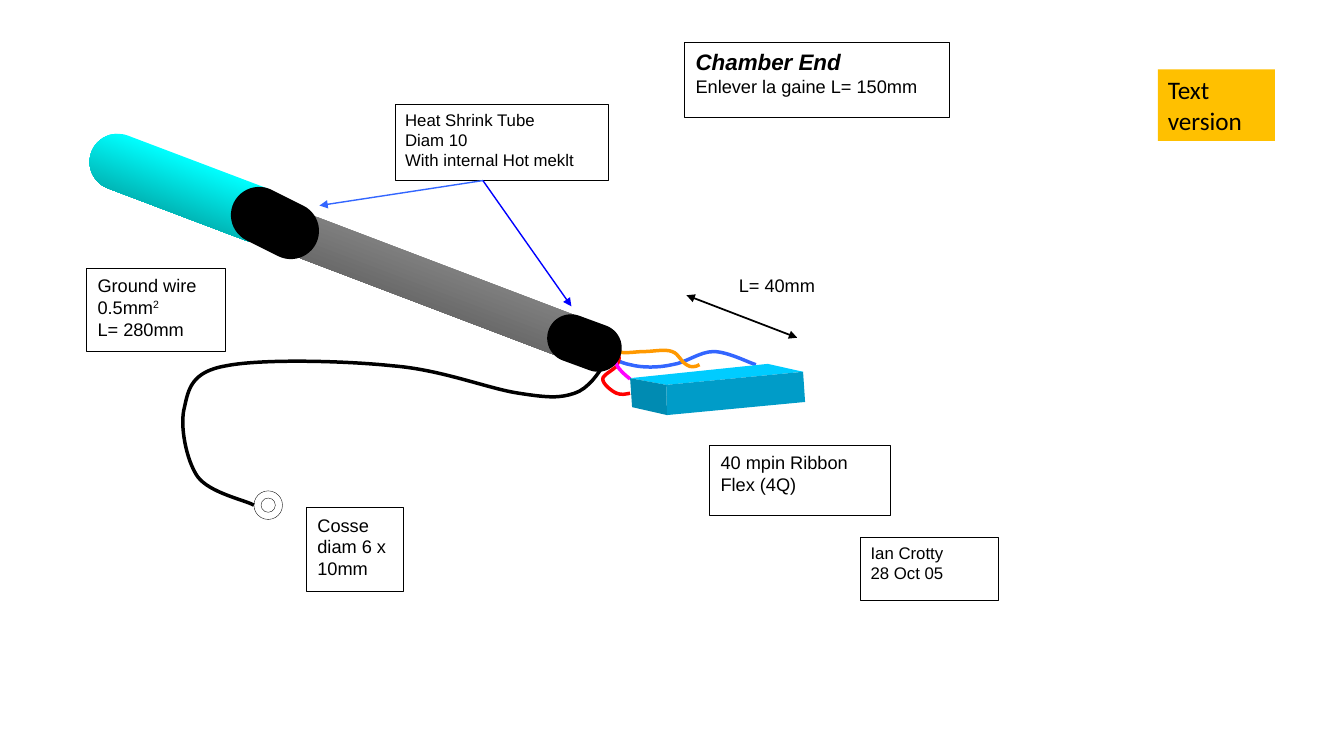
import math

from lxml import etree
from pptx import Presentation
from pptx.dml.color import RGBColor
from pptx.enum.shapes import MSO_CONNECTOR, MSO_SHAPE
from pptx.enum.text import MSO_ANCHOR, MSO_AUTO_SIZE, PP_ALIGN
from pptx.oxml.ns import qn
from pptx.util import Cm, Pt

RECT, ROUND, OVAL = MSO_SHAPE.RECTANGLE, MSO_SHAPE.ROUNDED_RECTANGLE, MSO_SHAPE.OVAL
STRAIGHT = MSO_CONNECTOR.STRAIGHT
TOP, LEFT, NO_FIT = MSO_ANCHOR.TOP, PP_ALIGN.LEFT, MSO_AUTO_SIZE.NONE

COLORS = {
    "black": "000000", "white": "FFFFFF", "amber": "FFC000",
    "cyan": "00FFFF", "cyan shade": "006060",
    "gray": "868686", "gray shade": "383838",
    "blue wire": "3366FF", "red wire": "FF0000",
    "orange wire": "FF9900", "magenta wire": "FF00FF", "arrow": "0000FF",
    "block top": "00CCFF", "block side": "009CC8", "block end": "008BB2",
}
WIDE, NARROW = (0.28, 0.15), (0.25, 0.13)

# Each wire: colour, then a start point followed by cubic curve points
WIRES = [
    ("blue wire", [(15.19, 8.86), (15.39, 8.99), (15.6, 9.14), (15.88, 9.19),
                   (16.18, 9.27), (16.59, 9.27), (16.94, 9.19),
                   (17.3, 9.14), (17.63, 8.86), (17.98, 8.86),
                   (18.34, 8.86), (18.87, 9.14), (19.05, 9.19)]),
    ("red wire", [(14.83, 8.51), (15.11, 8.61), (15.42, 8.74), (15.54, 8.86),
                  (15.65, 8.97), (15.6, 9.09), (15.54, 9.22),
                  (15.47, 9.32), (15.19, 9.45), (15.19, 9.55),
                  (15.19, 9.68), (15.42, 9.86), (15.54, 9.91),
                  (15.65, 9.96), (15.77, 9.93), (15.88, 9.91)]),
    ("orange wire", [(14.83, 8.51), (15.06, 8.66), (15.29, 8.79), (15.54, 8.86),
                     (15.77, 8.92), (16, 8.86), (16.23, 8.86),
                     (16.46, 8.86), (16.76, 8.79), (16.94, 8.86),
                     (17.12, 8.92), (17.17, 9.14), (17.3, 9.19),
                     (17.4, 9.27), (17.53, 9.25), (17.63, 9.19)]),
    ("magenta wire", [(14.83, 8.15), (15.11, 8.28), (15.42, 8.38), (15.54, 8.51),
                      (15.65, 8.61), (15.54, 8.74), (15.54, 8.86),
                      (15.54, 8.97), (15.47, 9.09), (15.54, 9.19),
                      (15.6, 9.32), (15.75, 9.45), (15.88, 9.55)]),
    ("black", [(14.83, 8.86), (15.04, 8.94), (15.24, 9.04), (15.19, 9.22),
               (15.11, 9.37), (14.83, 9.8), (14.48, 9.91),
               (14.12, 10.03), (13.84, 10.03), (13.08, 9.91),
               (12.32, 9.8), (11.15, 9.32), (9.91, 9.22),
               (8.69, 9.09), (6.58, 9.04), (5.69, 9.22),
               (4.83, 9.37), (4.75, 9.8), (4.65, 10.26),
               (4.52, 10.72), (4.7, 11.61), (4.98, 12.01),
               (5.28, 12.42), (6.17, 12.6), (6.4, 12.73)]),
]

# Centres of both ends, radius, lit colour, shaded colour
TUBES = [
    ((2.97, 4.08), (6.43, 5.39), 0.71, "cyan", "cyan shade"),
    ((7.81, 6), (14.49, 8.54), 0.56, "gray", "gray shade"),
    ((6.53, 5.42), (7.33, 5.82), 0.71, "black", "black"),
    ((14.39, 8.52), (15.07, 8.77), 0.6, "black", "black"),
]

BLOCK = [
    ("block top", [(15.88, 9.53), (19.35, 9.17), (20.24, 9.37), (16.79, 9.7)]),
    ("block side", [(16.79, 9.7), (20.24, 9.37), (20.29, 10.13), (16.81, 10.46)]),
    ("block end", [(15.88, 9.53), (16.79, 9.7), (16.81, 10.46), (15.93, 10.26)]),
]

# Position and size, lines, font size, insets
BOXES = [
    ((17.88, 11.23, 4.57, 1.75), ["40 mpin Ribbon Flex (4Q)"], 13, WIDE),
    ((7.72, 12.8, 2.46, 2.11), ["Cosse diam 6 x 10mm"], 13, WIDE),
    ((9.96, 2.64, 5.38, 1.9),
     ["Heat Shrink Tube", "Diam 10", "With internal Hot meklt"], 12, NARROW),
    ((21.69, 13.54, 3.48, 1.6), ["Ian Crotty", "28 Oct 05"], 12, NARROW),
]


def rgb(name):
    return RGBColor.from_string(COLORS[name])


def style(sp, fill=None, line=None, width=0.75):
    sp.shadow.inherit = False
    if fill:
        sp.fill.solid()
        sp.fill.fore_color.rgb = rgb(fill)
    else:
        sp.fill.background()
    if line:
        sp.line.color.rgb = rgb(line)
        sp.line.width = Pt(width)
    else:
        sp.line.fill.background()


def write(sp, lines, size, insets, font="Arial"):
    tf = sp.text_frame
    tf.word_wrap, tf.auto_size, tf.vertical_anchor = True, NO_FIT, TOP
    tf.margin_left = tf.margin_right = Cm(insets[0])
    tf.margin_top = tf.margin_bottom = Cm(insets[1])
    tf.text = "\n".join(lines)
    for p in tf.paragraphs:
        p.alignment = LEFT
        p.font.name, p.font.size = font, Pt(size)
        p.font.color.rgb = rgb("black")
    return tf


def add_box(slide, place, lines, size, insets, fill=None, line="black", font="Arial"):
    sp = slide.shapes.add_shape(RECT, *map(Cm, place))
    style(sp, fill, line)
    return write(sp, lines, size, insets, font)


def add_title(slide):
    sp = slide.shapes.title
    sp.left, sp.top, sp.width, sp.height = map(Cm, (17.25, 1.07, 6.68, 1.9))
    sp.fill.solid()
    sp.fill.fore_color.rgb = rgb("white")
    sp.line.color.rgb = rgb("black")
    sp.line.width = Pt(0.75)
    tf = write(sp, ["Chamber End", "Enlever la gaine L= 150mm"], 13, WIDE)
    font = tf.paragraphs[0].font
    font.size, font.bold, font.italic = Pt(16), True, True


def add_outline(slide, points, closed):
    points = [(Cm(x), Cm(y)) for x, y in points]
    builder = slide.shapes.build_freeform(*points[0])
    builder.add_line_segments(points[1:], close=closed)
    return builder.convert_to_shape()


def add_wire(slide, color, points):
    sp = add_outline(slide, points, False)
    style(sp, None, color, 2.5)
    # Merge every three straight segments into one cubic curve
    segments = list(sp._element.iter(qn("a:lnTo")))
    for i in range(0, len(segments), 3):
        curve = etree.Element(qn("a:cubicBezTo"))
        segments[i].addprevious(curve)
        for segment in segments[i:i + 3]:
            curve.append(segment[0])
            segment.getparent().remove(segment)


def add_tube(slide, start, end, radius, lit, shade):
    (x1, y1), (x2, y2) = start, end
    length, height = math.dist(start, end) + 2 * radius, 2 * radius
    left, top = (x1 + x2 - length) / 2, (y1 + y2 - height) / 2
    sp = slide.shapes.add_shape(ROUND, *map(Cm, (left, top, length, height)))
    sp.adjustments[0] = 0.5
    sp.rotation = math.degrees(math.atan2(y2 - y1, x2 - x1))
    style(sp, lit)
    if lit != shade:
        sp.fill.gradient()
        sp.fill.gradient_angle = 270
        for stop, color, position in zip(sp.fill.gradient_stops, (lit, shade), (0.35, 1)):
            stop.color.rgb = rgb(color)
            stop.position = position


def add_arrow(slide, start, end, color, width, both=False):
    line = slide.shapes.add_connector(STRAIGHT, *map(Cm, start + end))
    line.line.color.rgb = rgb(color)
    line.line.width = Pt(width)
    ln = line.line._get_or_add_ln()
    for tag in ("a:headEnd", "a:tailEnd") if both else ("a:tailEnd",):
        etree.SubElement(ln, qn(tag), type="triangle")
    etree.SubElement(line._element.spPr, qn("a:effectLst"))


def main():
    prs = Presentation()
    prs.slide_width, prs.slide_height = Cm(33.87), Cm(19.05)
    slide = prs.slides.add_slide(prs.slide_layouts[5])
    add_title(slide)

    # Cable assembly
    for wire in WIRES:
        add_wire(slide, *wire)
    for tube in TUBES:
        add_tube(slide, *tube)
    for color, points in BLOCK:
        style(add_outline(slide, points, True), color)

    # Ring terminal
    for radius in (0.36, 0.18):
        place = (6.76 - radius, 12.73 - radius, 2 * radius, 2 * radius)
        style(slide.shapes.add_shape(OVAL, *map(Cm, place)), None, "black", 0.25)

    # Labels
    for box in BOXES:
        add_box(slide, *box)
    add_box(slide, (18.34, 6.76, 3.02, 0.97), ["L= 40mm"], 13, WIDE, line=None)
    add_box(slide, (29.18, 1.75, 2.95, 1.8), ["Text version"], 18, NARROW,
            "amber", None, "Calibri")
    tf = add_box(slide, (2.18, 6.76, 3.51, 2.11),
                 ["Ground wire 0.5mm", "L= 280mm"], 13, WIDE)
    r = tf.paragraphs[0].add_run()
    r.text = "2"
    r._r.get_or_add_rPr().set("baseline", "30000")

    # Arrows
    add_arrow(slide, (17.3, 7.44), (20.09, 8.51), "black", 1.25, both=True)
    add_arrow(slide, (12.17, 4.55), (8.05, 5.18), "blue wire", 1)
    add_arrow(slide, (12.17, 4.55), (14.4, 7.72), "arrow", 1)

    prs.save("out.pptx")


if __name__ == "__main__":
    main()
